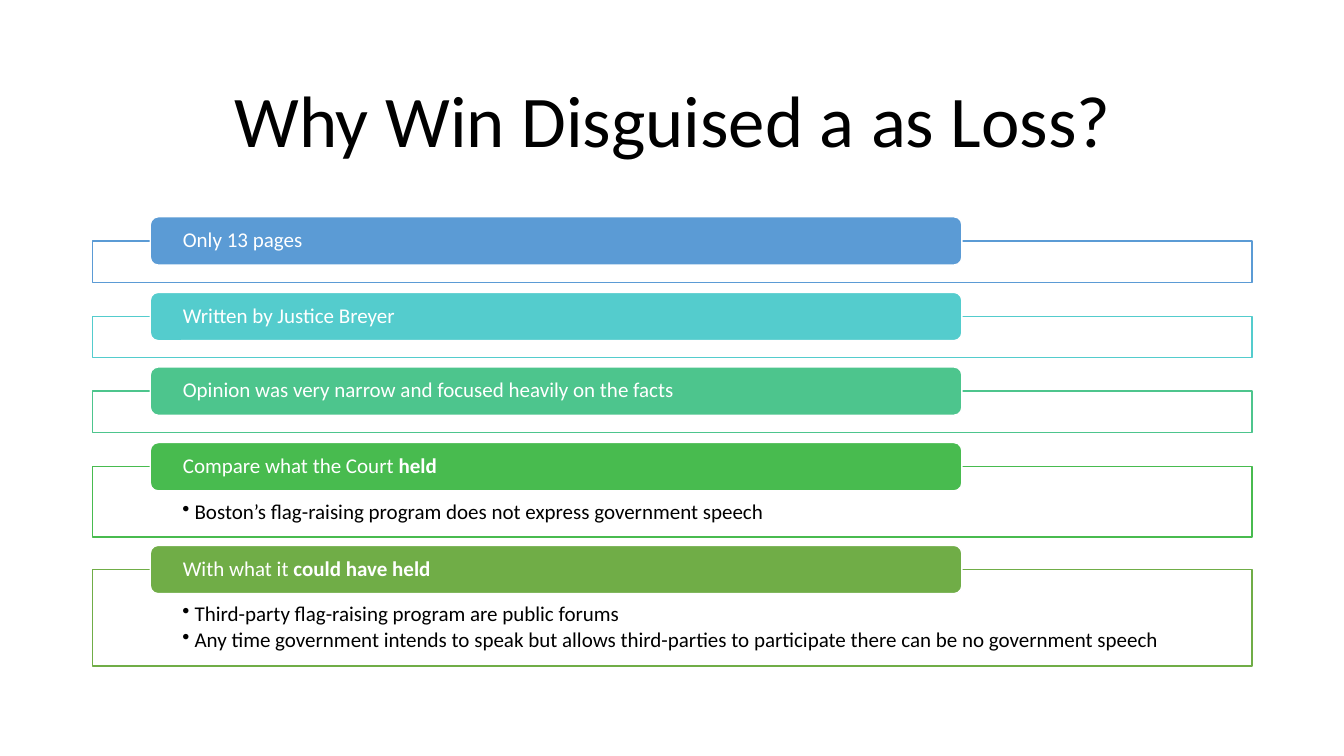
"""Build the slide on why a win was disguised as a loss."""
from lxml.etree import SubElement
from pptx import Presentation
from pptx.dml.color import RGBColor
from pptx.enum.shapes import MSO_SHAPE as SHAPE
from pptx.enum.text import MSO_ANCHOR as ANCHOR, PP_ALIGN as ALIGN
from pptx.oxml.ns import qn
from pptx.util import Inches, Pt

COLORS = {
    "white": "FFFFFF", "black": "000000", "blue": "5B9BD5", "teal": "54CCCD",
    "mint": "4DC58D", "green": "48BB4F", "olive": "70AD47",
}
SECTIONS = [
    ("blue", 2.39, 0.41, [("Only 13 pages", False)], []),
    ("teal", 3.14, 0.41, [("Written by Justice Breyer", False)], []),
    ("mint", 3.88, 0.41,
     [("Opinion was very narrow and focused heavily on the facts", False)], []),
    ("green", 4.63, 0.7, [("Compare what the Court ", False), ("held", True)],
     ["Boston’s flag-raising program does not express government speech"]),
    ("olive", 5.65, 0.96, [("With what it ", False), ("could have held", True)],
     ["Third-party flag-raising program are public forums",
      "Any time government intends to speak but allows third-parties to "
      "participate there can be no government speech"]),
]


def add_box(kind, left, top, width, height, fill, line, insets, anchor):
    shape = slide.shapes.add_shape(
        kind, Inches(left), Inches(top), Inches(width), Inches(height))
    shape.shadow.inherit = False
    shape.fill.solid()
    shape.fill.fore_color.rgb = RGBColor.from_string(COLORS[fill])
    shape.line.color.rgb = RGBColor.from_string(COLORS[line])
    shape.line.width = Pt(1)
    frame = shape.text_frame
    frame.word_wrap = True
    frame.vertical_anchor = anchor
    frame.margin_left = frame.margin_right = Inches(insets[0])
    frame.margin_top, frame.margin_bottom = Inches(insets[1]), Inches(insets[2])
    return shape


def write(paragraph, runs, size, color, align, space_after=0):
    paragraph.alignment = align
    paragraph.line_spacing = 0.9
    paragraph.space_after = Pt(space_after)
    for text, bold in runs:
        run = paragraph.add_run()
        run.text = text
        run.font.name = "Calibri"
        run.font.size = Pt(size)
        run.font.bold = bold
        run.font.color.rgb = RGBColor.from_string(COLORS[color])


presentation = Presentation()
presentation.slide_width = Inches(13.33)
presentation.slide_height = Inches(7.5)
slide = presentation.slides.add_slide(presentation.slide_layouts[6])

title = slide.shapes.add_textbox(Inches(0.92), Inches(0.61), Inches(11.5), Inches(1.24))
title.text_frame.word_wrap = True
title.text_frame.vertical_anchor = ANCHOR.MIDDLE
write(title.text_frame.paragraphs[0], [("Why Win Disguised a as Loss?", False)],
      52, "black", ALIGN.CENTER)

for color, top, height, heading, bullets in SECTIONS:
    panel = add_box(SHAPE.RECTANGLE, 0.92, top, 11.5, height, "white", color,
                    (0.89, 0.34, 0.12), ANCHOR.TOP)
    panel_fill = panel.fill._xPr.find(qn("a:solidFill"))
    SubElement(panel_fill[0], qn("a:alpha"), val="90000")
    for index, bullet in enumerate(bullets):
        frame = panel.text_frame
        paragraph = frame.add_paragraph() if index else frame.paragraphs[0]
        write(paragraph, [(bullet, False)], 15, "black", ALIGN.LEFT, 2.25)
        properties = paragraph._p.get_or_add_pPr()
        properties.set("marL", str(Inches(0.12)))
        properties.set("indent", str(Inches(-0.12)))
        SubElement(properties, qn("a:buChar"), char="•")

    header = add_box(SHAPE.ROUNDED_RECTANGLE, 1.49, top - 0.24, 8.05, 0.48,
                     color, "white", (0.3, 0, 0), ANCHOR.MIDDLE)
    write(header.text_frame.paragraphs[0], heading, 15, "white", ALIGN.LEFT)

presentation.save("out.pptx")
